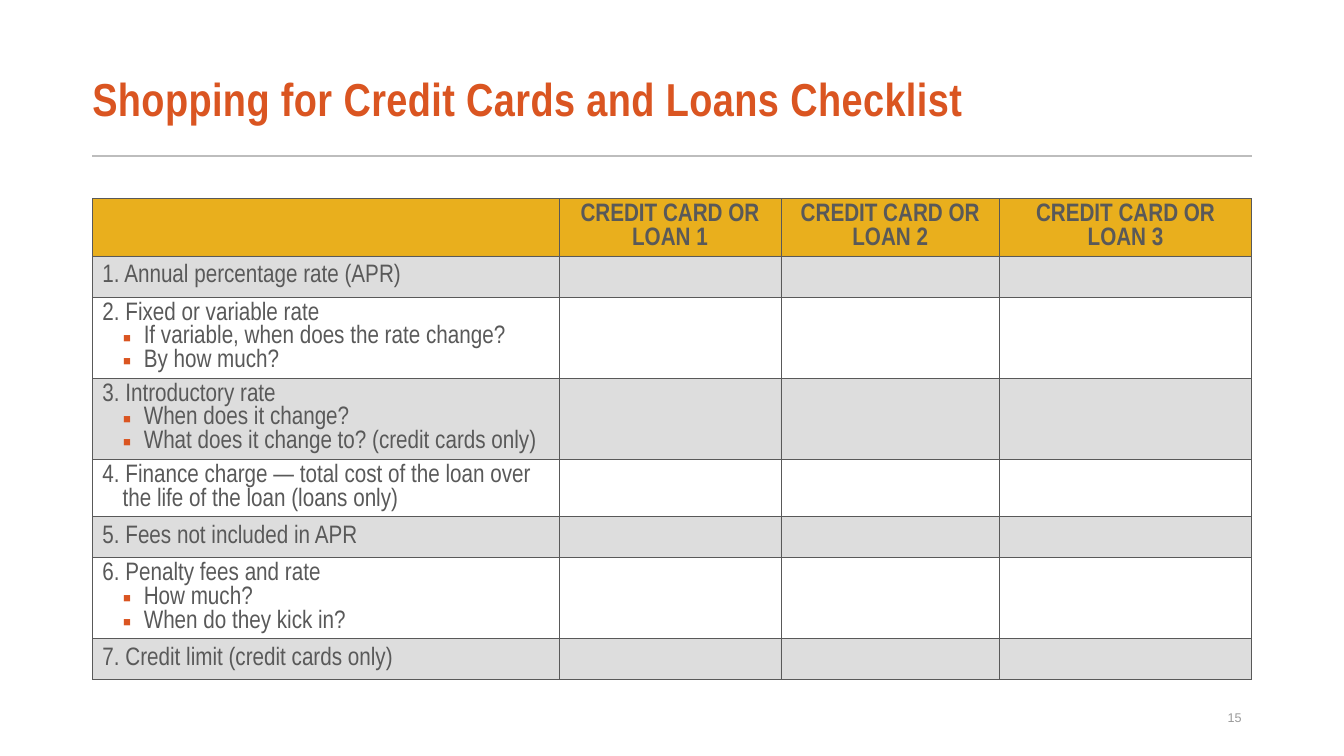
from lxml.etree import SubElement as Sub
from pptx import Presentation
from pptx.dml.color import RGBColor as Rgb
from pptx.enum.shapes import MSO_CONNECTOR as Conn
from pptx.enum.text import MSO_ANCHOR as Anchor, PP_ALIGN as Align
from pptx.oxml.ns import qn
from pptx.util import Pt

INK, RUST, GOLD = "595959", "DA5521", "E9AF1D"
NARROW = "Arial Narrow"
WIDTHS = [333.4, 158.4, 156.2, 180]
ROW, LINE = 29.3, 16.9
HEADS = [f"CREDIT CARD OR LOAN {n}" for n in (1, 2, 3)]
ITEMS = [
    ("1. Annual percentage rate (APR)", []),
    ("2. Fixed or variable rate",
     ["If variable, when does the rate change?", "By how much?"]),
    ("3. Introductory rate",
     ["When does it change?", "What does it change to? (credit cards only)"]),
    ("4. Finance charge — total cost of the loan over the life of the loan (loans only)", []),
    ("5. Fees not included in APR", []),
    ("6. Penalty fees and rate", ["How much?", "When do they kick in?"]),
    ("7. Credit limit (credit cards only)", []),
]


def paint(color, code):
    """Set a colour format from a hex string."""
    color.rgb = Rgb.from_string(code)


def write(para, text, size, code, face=NARROW, bold=False):
    """Add one styled run to a paragraph."""
    run = para.add_run()
    run.text = text
    font = run.font
    font.size, font.name, font.bold = Pt(size), face, bold
    paint(font.color, code)
    return run


def add_box(slide, left, top, width, height):
    """Add a wrapped, vertically centred text box and return its frame."""
    frame = slide.shapes.add_textbox(Pt(left), Pt(top), Pt(width), Pt(height)).text_frame
    frame.word_wrap = True
    frame.vertical_anchor = Anchor.MIDDLE
    return frame


def add_title(slide, left, top, width, height):
    """Place the heading with the grey rule below it."""
    frame = add_box(slide, left, top, width, height)
    frame.margin_left = 0
    para = frame.paragraphs[0]
    para.line_spacing = 0.87
    run = write(para, "Shopping for Credit Cards and Loans Checklist", 33, RUST, bold=True)
    run.font._element.set("spc", "30")
    level = Pt(top + height + 4.8)
    rule = slide.shapes.add_connector(Conn.STRAIGHT, Pt(left), level, Pt(left + width), level)
    rule.line.width = Pt(1.5)
    paint(rule.line.color, "BDBDBD")
    Sub(rule._element.spPr, qn("a:effectLst"))


def indent(para, left, hang):
    """Give a paragraph a hanging indent and return its properties."""
    props = para._p.get_or_add_pPr()
    props.set("marL", str(Pt(left)))
    props.set("indent", str(-Pt(hang)))
    return props


def bullet(para):
    """Turn a paragraph into a square-bulleted sub-item."""
    props = indent(para, 29.5, 15.1)
    Sub(Sub(props, qn("a:buClr")), qn("a:srgbClr"), val=RUST)
    Sub(props, qn("a:buFont"), typeface="Arial")
    Sub(props, qn("a:buChar"), char="▪")


def enter(para, text, bold=False):
    """Write one table paragraph with fixed line spacing."""
    para.line_spacing = Pt(LINE)
    write(para, text, 18, INK, bold=bold)


def frame_cell(cell):
    """Draw thin borders on all four sides of a cell."""
    props = cell._tc.get_or_add_tcPr()
    for side in "LRTB":
        line = Sub(props, qn(f"a:ln{side}"), w=str(Pt(0.5)))
        Sub(Sub(line, qn("a:solidFill")), qn("a:srgbClr"), val=INK)


def fill_cell(cell, row):
    """Fill a cell gold in the header and pale grey in odd rows."""
    if row and row % 2 == 0:
        cell.fill.background()
        return
    cell.fill.solid()
    paint(cell.fill.fore_color, INK if row else GOLD)
    if row:
        tint = cell._tc.tcPr.find(qn("a:solidFill"))[0]
        Sub(tint, qn("a:alpha"), val="20000")


def add_list(slide, left, top):
    """Place the checklist table."""
    count = len(ITEMS) + 1
    table = slide.shapes.add_table(count, len(WIDTHS), Pt(left), Pt(top),
                                   Pt(sum(WIDTHS)), Pt(ROW * count)).table
    table.horz_banding = False
    for col, width in zip(table.columns, WIDTHS):
        col.width = Pt(width)
    for num, row in enumerate(table.rows):
        row.height = Pt(ROW)
        for cell in row.cells:
            cell.vertical_anchor = Anchor.MIDDLE
            frame_cell(cell)
            fill_cell(cell, num)
    for col, head in enumerate(HEADS, 1):
        para = table.cell(0, col).text_frame.paragraphs[0]
        para.alignment = Align.CENTER
        enter(para, head, True)
    for num, (item, subs) in enumerate(ITEMS, 1):
        frame = table.cell(num, 0).text_frame
        indent(frame.paragraphs[0], 14.4, 14.4)
        enter(frame.paragraphs[0], item)
        for sub in subs:
            para = frame.add_paragraph()
            bullet(para)
            enter(para, sub)


def add_page(slide, left, top, width, height):
    """Place the page number."""
    para = add_box(slide, left, top, width, height).paragraphs[0]
    para.alignment = Align.RIGHT
    write(para, "15", 9, "9A9A9A", "Arial")


def main():
    """Build and save the slide."""
    deck = Presentation()
    deck.slide_width, deck.slide_height = Pt(960), Pt(540)
    slide = deck.slides.add_slide(deck.slide_layouts[6])
    add_title(slide, 66, 38.9, 828, 67.7)
    add_list(slide, 66, 141.8)
    add_page(slide, 678, 498.2, 216, 28.8)
    deck.save("out.pptx")


if __name__ == "__main__":
    main()
